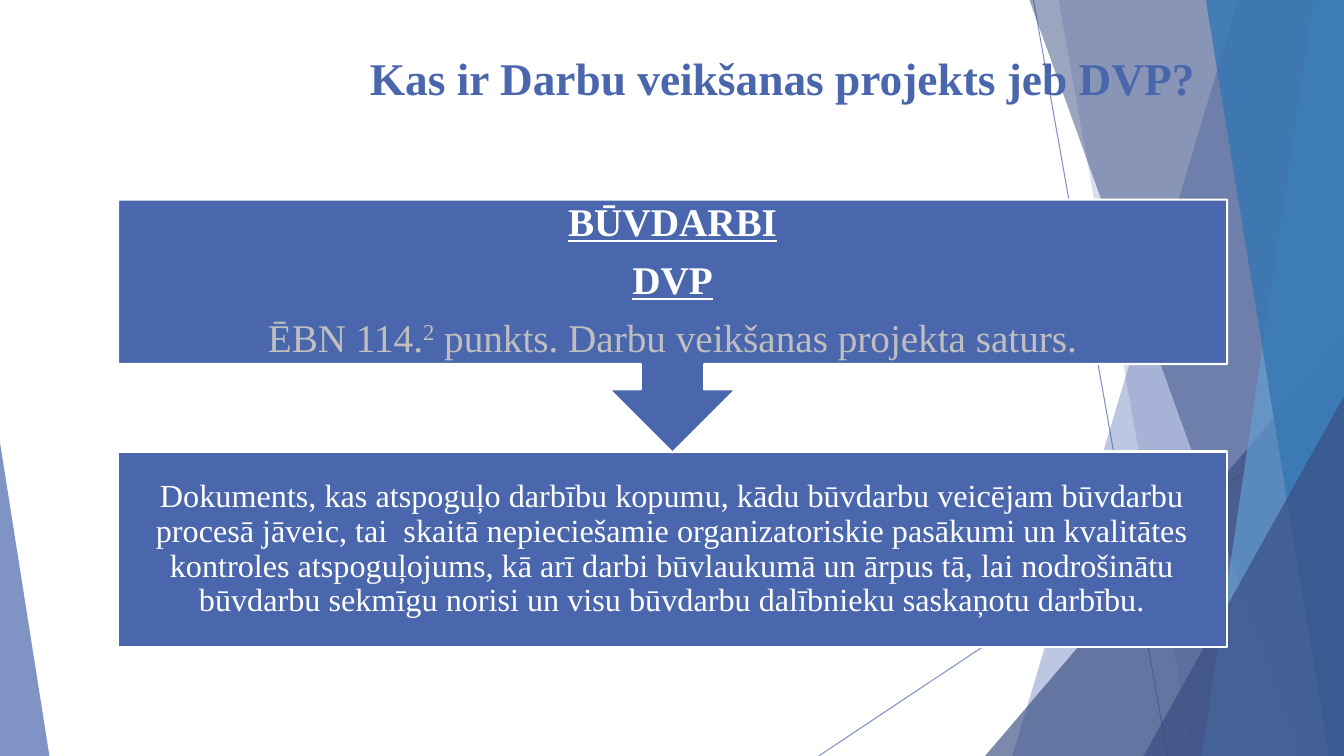
from lxml.etree import SubElement
from pptx import Presentation
from pptx.dml.color import RGBColor
from pptx.enum.shapes import MSO_CONNECTOR, MSO_SHAPE
from pptx.enum.text import MSO_ANCHOR, PP_ALIGN
from pptx.oxml.ns import qn
from pptx.util import Inches, Pt

WIDTH, HEIGHT = 13.33, 7.5
FONT = "Times New Roman"
COLORS = {
    "blue": "4A66AC",
    "navy": "384C81",
    "sky": "629DD1",
    "ocean": "3477B2",
    "white": "FFFFFF",
    "grey": "BFBFBF",
}
BOX_LEFT, BOX_WIDTH = 1.17, 11
CALLOUT_TOP, CALLOUT_HEIGHT, CALLOUT_TEXT_HEIGHT = 1.98, 2.51, 1.63
BODY_TOP, BODY_HEIGHT = 4.48, 1.94
BODY_TEXT = (
    "Dokuments, kas atspoguļo darbību kopumu, kādu būvdarbu veicējam būvdarbu "
    "procesā jāveic, tai  skaitā nepieciešamie organizatoriskie pasākumi un "
    "kvalitātes kontroles atspoguļojums, kā arī darbi būvlaukumā un ārpus tā, "
    "lai nodrošinātu būvdarbu sekmīgu norisi un visu būvdarbu dalībnieku "
    "saskaņotu darbību."
)


def rgb(name):
    return RGBColor.from_string(COLORS[name])


def set_alpha(fill, percent):
    """Make the solid colour inside an a:solidFill parent see-through."""
    color = fill.find(f".//{qn('a:srgbClr')}")
    SubElement(color, qn("a:alpha"), val=str(percent * 1000))


def paint(sp, color, alpha=100):
    sp.shadow.inherit = False
    sp.fill.solid()
    sp.fill.fore_color.rgb = rgb(color)
    sp.line.fill.background()
    if alpha < 100:
        set_alpha(sp._element.spPr.find(qn("a:solidFill")), alpha)


def add_thin_line(slide, x1, y1, x2, y2):
    line = slide.shapes.add_connector(
        MSO_CONNECTOR.STRAIGHT, Inches(x1), Inches(y1), Inches(x2), Inches(y2))
    line.line.color.rgb = rgb("blue")
    line.line.width = Pt(0.75)
    spPr = line._element.spPr
    set_alpha(spPr.find(qn("a:ln")), 70)
    SubElement(spPr, qn("a:effectLst"))


def add_facet(slide, top_x, bottom_x, color, alpha):
    """Full-height band from a slanted left edge to the slide's right edge."""
    builder = slide.shapes.build_freeform(Inches(top_x), 0)
    corners = [(WIDTH, 0), (WIDTH, HEIGHT), (bottom_x, HEIGHT)]
    builder.add_line_segments([(Inches(x), Inches(y)) for x, y in corners])
    paint(builder.convert_to_shape(), color, alpha)


def add_triangle(slide, left, top, width, tip, color, alpha):
    """Triangle standing on the slide's bottom edge."""
    sp = slide.shapes.add_shape(
        MSO_SHAPE.ISOSCELES_TRIANGLE, Inches(left), Inches(top),
        Inches(width), Inches(HEIGHT - top))
    sp.adjustments[0] = tip
    paint(sp, color, alpha)


def add_background(slide):
    add_thin_line(slide, 10.25, 0, 11.58, HEIGHT)
    add_thin_line(slide, WIDTH, 4.03, 8.12, HEIGHT)
    add_facet(slide, 12.28, 10.04, "blue", 36)
    add_facet(slide, 10.5, 11.83, "blue", 20)
    add_triangle(slide, 9.77, 3.33, 3.56, 1, "navy", 66)
    add_facet(slide, 10.21, 12.91, "navy", 50)
    add_facet(slide, 13.03, 11.92, "sky", 70)
    add_facet(slide, 11.96, 13.18, "ocean", 80)
    add_triangle(slide, 11.34, 3.93, 1.99, 1, "navy", 66)
    add_triangle(slide, 0, 4.39, 0.49, 0, "blue", 70)


def add_panel(slide, shape_type, top, height):
    sp = slide.shapes.add_shape(
        shape_type, Inches(BOX_LEFT), Inches(top), Inches(BOX_WIDTH), Inches(height))
    paint(sp, "blue")
    sp.line.color.rgb = rgb("white")
    sp.line.width = Pt(1.5)
    return sp


def add_text(slide, left, top, width, height, inset=None):
    tf = slide.shapes.add_textbox(
        Inches(left), Inches(top), Inches(width), Inches(height)).text_frame
    tf.word_wrap = True
    if inset is not None:
        tf.vertical_anchor = MSO_ANCHOR.MIDDLE
        tf.margin_left = tf.margin_right = Inches(inset)
        tf.margin_top = tf.margin_bottom = Inches(inset)
    return tf


def style_run(r, size, color, bold=False, underline=False):
    r.font.name = FONT
    r.font.size = Pt(size)
    r.font.color.rgb = rgb(color)
    r.font.bold = bold
    r.font.underline = underline


def center_paragraphs(tf):
    for p in tf.paragraphs:
        p.alignment = PP_ALIGN.CENTER
        p.line_spacing = 0.9
    for p in tf.paragraphs[:-1]:
        p.space_after = Pt(11)


def add_title(slide):
    tf = add_text(slide, 3.57, 0.45, 8.85, 1.4)
    tf.text = "Kas ir Darbu veikšanas projekts jeb DVP?"
    style_run(tf.paragraphs[0].runs[0], 32.4, "blue", bold=True)


def add_body(slide):
    add_panel(slide, MSO_SHAPE.RECTANGLE, BODY_TOP, BODY_HEIGHT)
    tf = add_text(slide, BOX_LEFT, BODY_TOP, BOX_WIDTH, BODY_HEIGHT, 0.18)
    tf.text = BODY_TEXT
    style_run(tf.paragraphs[0].runs[0], 23, "white")
    center_paragraphs(tf)


def add_callout(slide):
    sp = add_panel(slide, MSO_SHAPE.UP_ARROW_CALLOUT, CALLOUT_TOP, CALLOUT_HEIGHT)
    sp.rotation = 180
    tf = add_text(slide, BOX_LEFT, CALLOUT_TOP, BOX_WIDTH, CALLOUT_TEXT_HEIGHT, 0.22)
    tf.text = "BŪVDARBI\nDVP"
    for p in tf.paragraphs:
        style_run(p.runs[0], 28, "white", bold=True, underline=True)
    p = tf.add_paragraph()
    for text in ("ĒBN 114.", "2", " punkts. Darbu veikšanas projekta saturs."):
        r = p.add_run()
        r.text = text
        style_run(r, 28, "grey")
    p.runs[1].font._element.set("baseline", "30000")
    center_paragraphs(tf)


def main():
    prs = Presentation()
    prs.slide_width, prs.slide_height = Inches(WIDTH), Inches(HEIGHT)
    slide = prs.slides.add_slide(prs.slide_layouts[6])
    add_background(slide)
    add_title(slide)
    add_body(slide)
    add_callout(slide)
    prs.save("out.pptx")


if __name__ == "__main__":
    main()
